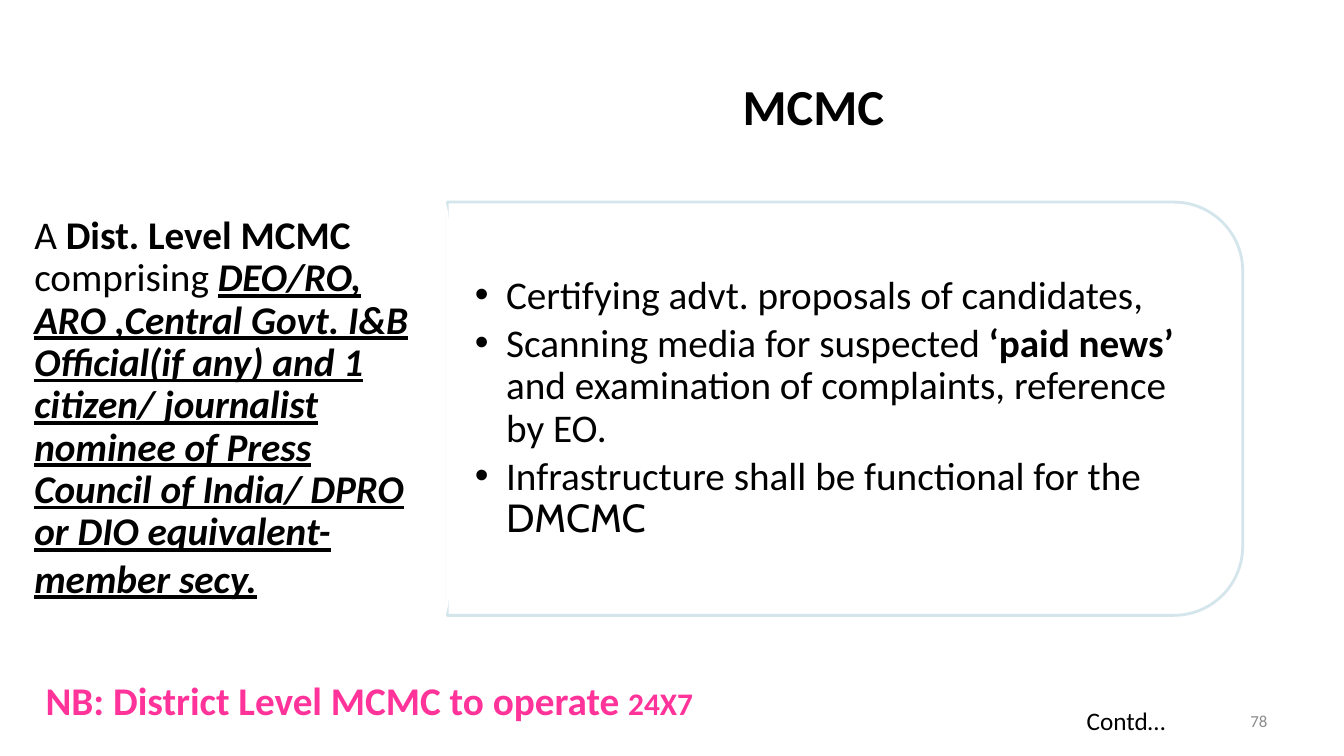
import pptx
import pptx.util
import pptx.dml.color
import pptx.enum.shapes
import pptx.enum.text
import pptx.oxml.ns
import lxml.etree

SHAPES = pptx.enum.shapes.MSO_SHAPE
ALIGN = pptx.enum.text.PP_ALIGN
ANCHOR = pptx.enum.text.MSO_ANCHOR
AUTOSIZE = pptx.enum.text.MSO_AUTO_SIZE
COLORS = {"ink": "000000", "paper": "FFFFFF", "panel": "D0E3EA",
          "number": "8C8C8C", "note": "FF3399"}
BODY_INSETS = (12, 6, 12, 6)
PANEL_INSETS = (27, 14, 27, 14)
TITLE_INSETS = (150, 5, 10, 5)
TEXT_INSETS = (10, 5, 10, 5)
BOLD = {"bold": True}
STRESSED = {"bold": True, "italic": True, "underline": True}


def px(length):
    return pptx.util.Emu(length * 9144)


def rgb(name):
    return pptx.dml.color.RGBColor.from_string(COLORS[name])


def add_xml(parent, tag, **attributes):
    return lxml.etree.SubElement(parent, pptx.oxml.ns.qn(tag), attributes)


class SlideBuilder:
    font = "Calibri"

    def __init__(self, page):
        self.page = page

    def place(self, box, at):
        box.left, box.top, box.width, box.height = map(px, at)

    def outline(self, kind, at, color, rotation=0, opacity=100):
        shape = self.page.shapes.add_shape(kind, *map(px, at))
        shape.shadow.inherit = False
        shape.rotation = rotation
        shape.fill.background()
        shape.line.color.rgb = rgb(color)
        shape.line.width = pptx.util.Pt(2)
        if opacity < 100:
            fill = shape.line.fill._xPr.find(pptx.oxml.ns.qn("a:solidFill"))
            add_xml(fill[0], "a:alpha", val=str(opacity * 1000))

    def frame(self, box, anchor, insets, wrap=True):
        frame = box.text_frame
        frame.word_wrap = wrap
        frame.auto_size = AUTOSIZE.NONE if wrap else AUTOSIZE.SHAPE_TO_FIT_TEXT
        frame.vertical_anchor = anchor
        (frame.margin_left, frame.margin_top,
         frame.margin_right, frame.margin_bottom) = map(px, insets)
        return frame

    def fill_para(self, para, spans, size, color="ink", align=ALIGN.LEFT):
        para.alignment = align
        para.font.name = self.font
        para.font.size = pptx.util.Pt(size)
        para.font.color.rgb = rgb(color)
        for text, style in spans:
            span = para.add_run()
            span.text = text
            for key, value in style.items():
                if key == "cap":
                    span._r.get_or_add_rPr().set("cap", value)
                else:
                    setattr(span.font, key, value)

    def title(self, text, at):
        box = self.page.shapes.title
        self.place(box, at)
        box.fill.solid()
        box.fill.fore_color.rgb = rgb("paper")
        frame = self.frame(box, ANCHOR.BOTTOM, TITLE_INSETS)
        self.fill_para(frame.paragraphs[0],
                       [(text, {"bold": True, "cap": "small"})],
                       36, align=ALIGN.CENTER)

    def text(self, at, spans, size, color="ink", align=ALIGN.LEFT,
             anchor=ANCHOR.TOP, insets=TEXT_INSETS, wrap=True, spacing=None):
        box = self.page.shapes.add_textbox(*map(px, at))
        para = self.frame(box, anchor, insets, wrap).paragraphs[0]
        para.line_spacing = spacing
        self.fill_para(para, spans, size, color, align)

    def bullets(self, at, items, size):
        box = self.page.shapes.add_textbox(*map(px, at))
        frame = self.frame(box, ANCHOR.MIDDLE, PANEL_INSETS)
        for index, spans in enumerate(items):
            para = frame.add_paragraph() if index else frame.paragraphs[0]
            para.line_spacing = 0.9
            para.space_after = pptx.util.Pt(4)
            properties = para._p.get_or_add_pPr()
            properties.set("marL", str(px(31)))
            properties.set("indent", str(px(-31)))
            add_xml(properties, "a:buFont", typeface="Arial")
            add_xml(properties, "a:buChar", char="•")
            self.fill_para(para, spans, size)


def main():
    deck = pptx.Presentation()
    deck.slide_width, deck.slide_height = px(1333), px(750)
    builder = SlideBuilder(deck.slides.add_slide(deck.slide_layouts[5]))

    builder.title("MCMC", (0, 73, 1333, 67))
    builder.outline(SHAPES.ROUND_2_SAME_RECTANGLE, (633, 11, 410, 789),
                    "panel", rotation=90, opacity=90)
    builder.bullets((444, 220, 769, 370), [
        [("Certifying advt. proposals of candidates,", {})],
        [("Scanning media for suspected ", {}), ("‘paid news’ ", BOLD),
         ("and examination of complaints, reference by EO.", {})],
        [("Infrastructure shall be functional for the ", {}),
         ("DMCMC", {"name": "Cabin"})],
    ], 28)
    builder.outline(SHAPES.ROUNDED_RECTANGLE, (0, 149, 444, 513), "paper")
    builder.text((22, 171, 401, 470), [
        ("A", {}), (" Dist. Level MCMC ", BOLD), ("comprising ", {}),
        ("DEO/RO, ARO ,Central Govt. I&B Official(if any) and 1 citizen/ "
         "journalist nominee of Press Council of India/ DPRO or DIO "
         "equivalent- member secy.", STRESSED),
        (" ", {"name": "Cabin", "size": pptx.util.Pt(32)}),
    ], 28, anchor=ANCHOR.MIDDLE, insets=BODY_INSETS, spacing=0.9)
    builder.text((956, 695, 311, 40), [("78", {})], 12, "number",
                 ALIGN.RIGHT, ANCHOR.MIDDLE)
    builder.text((24, 666, 692, 57), [
        ("NB: District Level MCMC to operate ", BOLD),
        ("24x7 ", {"bold": True, "cap": "small"}),
    ], 28, "note", ALIGN.CENTER, wrap=False)
    builder.text((1068, 695, 100, 40), [("Contd…", {})], 18, wrap=False)
    deck.save("out.pptx")


if __name__ == "__main__":
    main()
